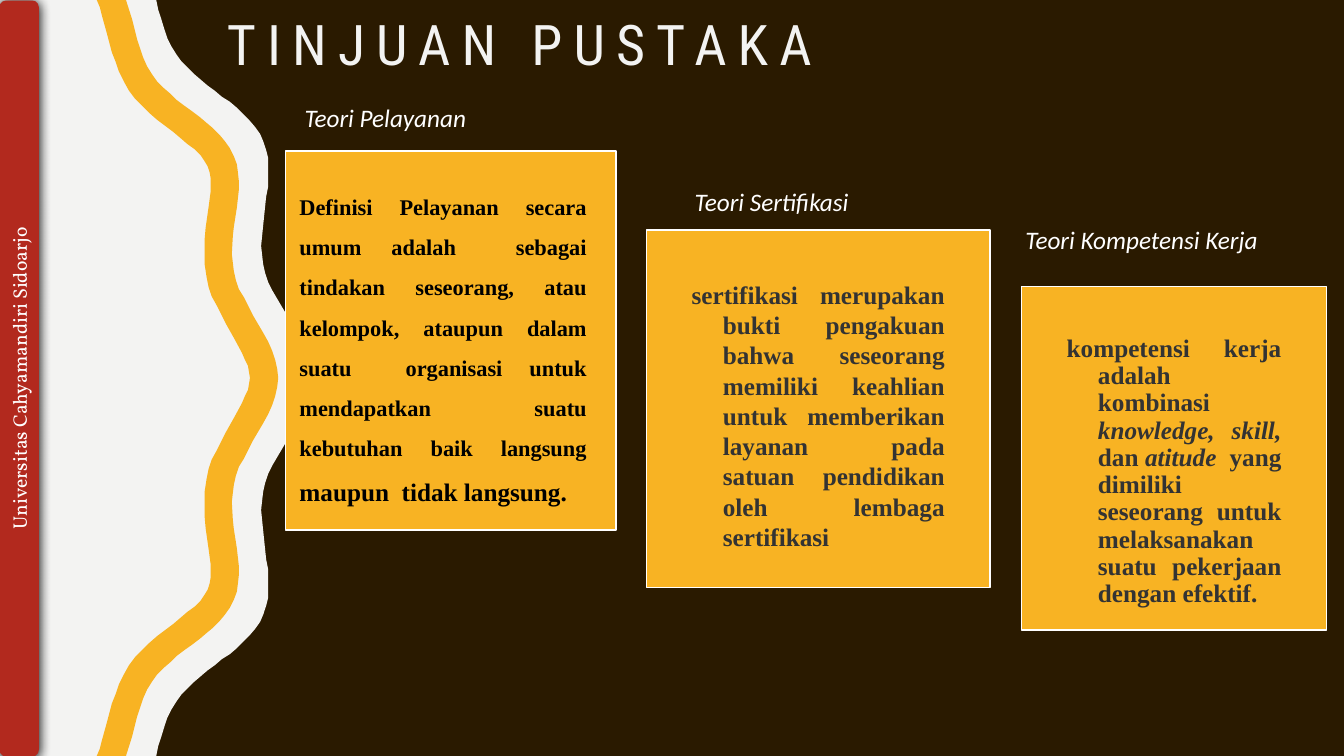
import pptx
import pptx.util
import pptx.dml.color
import pptx.enum.shapes
import pptx.enum.text
import pptx.oxml
import pptx.oxml.ns

PX = 9144  # 100 px to the inch
WIDE, HIGH = 1333, 750
DARK, PALE, GOLD, RED = "2A1A00", "F3F3F2", "F8B323", "B2291E"
WHITE, BLACK, GREY = "FFFFFF", "000000", "333333"
SERIF = "Times New Roman"
ALIGN = pptx.enum.text.PP_ALIGN
ANCHOR = pptx.enum.text.MSO_ANCHOR
SHAPE = pptx.enum.shapes.MSO_SHAPE


def paint(item, color):
    """Give a fill or a font a solid colour."""
    if hasattr(item, "solid"):
        item.solid()
        item.fore_color.rgb = pptx.dml.color.RGBColor.from_string(color)
    else:
        item.color.rgb = pptx.dml.color.RGBColor.from_string(color)


def write(shape, runs, face, size, color, align, inset=None, space=1.0):
    """Fill one paragraph with (text, changes) runs and return it."""
    frame = shape.text_frame
    frame.word_wrap = True
    frame.auto_size = pptx.enum.text.MSO_AUTO_SIZE.NONE
    frame.vertical_anchor = ANCHOR.TOP
    if inset:
        (frame.margin_left, frame.margin_top, frame.margin_right,
         frame.margin_bottom) = [n * PX for n in inset]
    para = frame.paragraphs[0]
    para.alignment = align
    para.line_spacing = space
    para.font.name = face
    para.font.size = pptx.util.Pt(size)
    paint(para.font, color)
    for text, change in runs:
        run = para.add_run()
        run.text = text
        for key, value in change.items():
            setattr(run.font, key, value)
    return para


deck = pptx.Presentation()
deck.slide_width, deck.slide_height = WIDE * PX, HIGH * PX
slide = deck.slides.add_slide(deck.slide_layouts[5])
shapes = slide.shapes
paint(slide.background.fill, DARK)

# Upper halves of the wavy edges; the lower halves mirror them
shore = [
    (155, 0), (157, 10), (160, 19), (163, 29), (166, 38), (170, 46), (175, 54),
    (180, 61), (186, 67), (192, 73), (199, 79), (206, 85), (213, 90), (220, 96),
    (228, 101), (235, 107), (241, 113), (247, 119), (253, 126), (258, 133),
    (261, 140), (264, 149), (266, 157), (266, 185), (264, 195), (261, 224),
    (259, 244), (260, 253), (261, 262), (263, 271), (266, 280), (270, 288),
    (280, 305), (290, 322), (299, 339), (302, 348), (305, 357), (307, 366),
    (308, 375)]
right = [
    (125, 0), (131, 19), (136, 39), (139, 48), (142, 57), (146, 66), (151, 74),
    (156, 81), (162, 87), (169, 93), (175, 99), (183, 105), (190, 110),
    (198, 116), (205, 122), (211, 127), (218, 134), (223, 140), (228, 147),
    (232, 155), (235, 163), (236, 171), (237, 180), (237, 188), (235, 206),
    (232, 225), (231, 234), (230, 252), (231, 261), (232, 269), (234, 278),
    (237, 287), (242, 295), (251, 313), (261, 330), (266, 339), (270, 348),
    (273, 357), (275, 366), (276, 375)]
left = [
    (96, 0), (99, 7), (101, 15), (106, 33), (111, 52), (115, 62), (118, 71),
    (123, 81), (128, 90), (134, 98), (141, 105), (148, 112), (156, 119),
    (164, 125), (172, 131), (179, 137), (186, 143), (193, 148), (199, 154),
    (203, 160), (206, 165), (208, 171), (209, 177), (209, 190), (207, 205),
    (204, 226), (203, 238), (203, 262), (205, 275), (207, 285), (210, 294),
    (215, 303), (224, 321), (233, 337), (240, 350), (243, 357), (246, 363),
    (247, 369), (248, 375)]
shore, right, left = [
    half + [(x, HIGH - y) for x, y in half[-2::-1]]
    for half in (shore, right, left)]
for edge, color in (([(0, 0)] + shore + [(0, HIGH)], PALE),
                    (right + left[::-1], GOLD)):
    path = shapes.build_freeform(*edge[0], scale=PX)
    path.add_line_segments(edge[1:], close=True)
    wave = path.convert_to_shape()
    wave.shadow.inherit = False
    wave.line.fill.background()
    paint(wave.fill, color)

title = shapes.title
shapes._spTree.append(title._element)
title.left, title.top, title.width, title.height = [
    n * PX for n in (215, 2, 903, 80)]
para = write(title, [("TINJUAN PUSTAKA", {})], "Roboto Condensed", 40, PALE,
             ALIGN.JUSTIFY, space=0.9)
title.text_frame.vertical_anchor = ANCHOR.BOTTOM
para.runs[0]._r.get_or_add_rPr().set("spc", "800")

band = shapes.add_shape(SHAPE.ROUNDED_RECTANGLE,
                        *[n * PX for n in (-356, 356, 750, 39)])
band.rotation = 270
band.line.fill.background()
paint(band.fill, RED)
band.shadow.inherit = False
glow = pptx.oxml.parse_xml(
    f'<a:outerShdw {pptx.oxml.ns.nsdecls("a")} blurRad="107950" dist="12700" '
    'dir="5400000" rotWithShape="0"><a:srgbClr val="000000"/></a:outerShdw>')
band._element.spPr.find(pptx.oxml.ns.qn("a:effectLst")).append(glow)
write(band, [("Universitas Cahyamandiri Sidoarjo", {})], "Vollkorn", 14, WHITE,
      ALIGN.CENTER)
band.text_frame.vertical_anchor = ANCHOR.MIDDLE

slant, plain = {"italic": True}, {"italic": False}
service = [
    ("Definisi Pelayanan secara umum adalah  sebagai tindakan seseorang, atau "
     "kelompok, ataupun dalam suatu  organisasi untuk mendapatkan suatu "
     "kebutuhan  baik  langsung ", {}),
    ("maupun  tidak langsung.", {"size": pptx.util.Pt(18)})]
proof = [
    ("sertifikasi merupakan bukti pengakuan bahwa seseorang memiliki keahlian "
     "untuk memberikan layanan pada satuan pendidikan oleh lembaga sertifikasi",
     {})]
skill = [
    ("kompetensi kerja adalah kombinasi ", plain),
    ("knowledge, skill,", slant), (" dan ", plain), ("atitude", slant),
    ("  yang dimiliki seseorang untuk melaksanakan  suatu pekerjaan dengan "
     "efektif.", plain)]

# Caption, its place, card place, text, size, colour, insets, spacing, indent
cards = [
    ("Teori Pelayanan", (302, 105, 305, 64), (283, 150, 328, 376),
     service, 16, BLACK, (14, 28, 29, 0), 1.5, 0),
    ("Teori Sertifikasi", (689, 188, 288, 74), (641, 228, 341, 355),
     proof, 18, GREY, (45, 49, 45, 45), 1.0, 31),
    ("Teori Kompetensi Kerja", (1017, 226, 288, 74), (1013, 284, 303, 341),
     skill, 18, GREY, (45, 49, 45, 45), 0.9, 31)]
for name, spot, place, runs, size, color, inset, space, hang in cards:
    label = shapes.add_textbox(*[n * PX for n in spot])
    write(label, [(name, slant)], "Calibri", 18, WHITE, ALIGN.LEFT,
          (0, 0, 49, 0), 0.9)
    card = shapes.add_shape(SHAPE.RECTANGLE, *[n * PX for n in place])
    card.shadow.inherit = False
    paint(card.fill, GOLD)
    paint(card.line.fill, WHITE)
    card.line.width = pptx.util.Pt(1)
    para = write(card, runs, SERIF, size, color, ALIGN.JUSTIFY, inset, space)
    para.font.bold = True
    props = para._p.get_or_add_pPr()
    props.set("marL", str(hang * PX))
    props.set("indent", str(-hang * PX))

deck.save("out.pptx")
